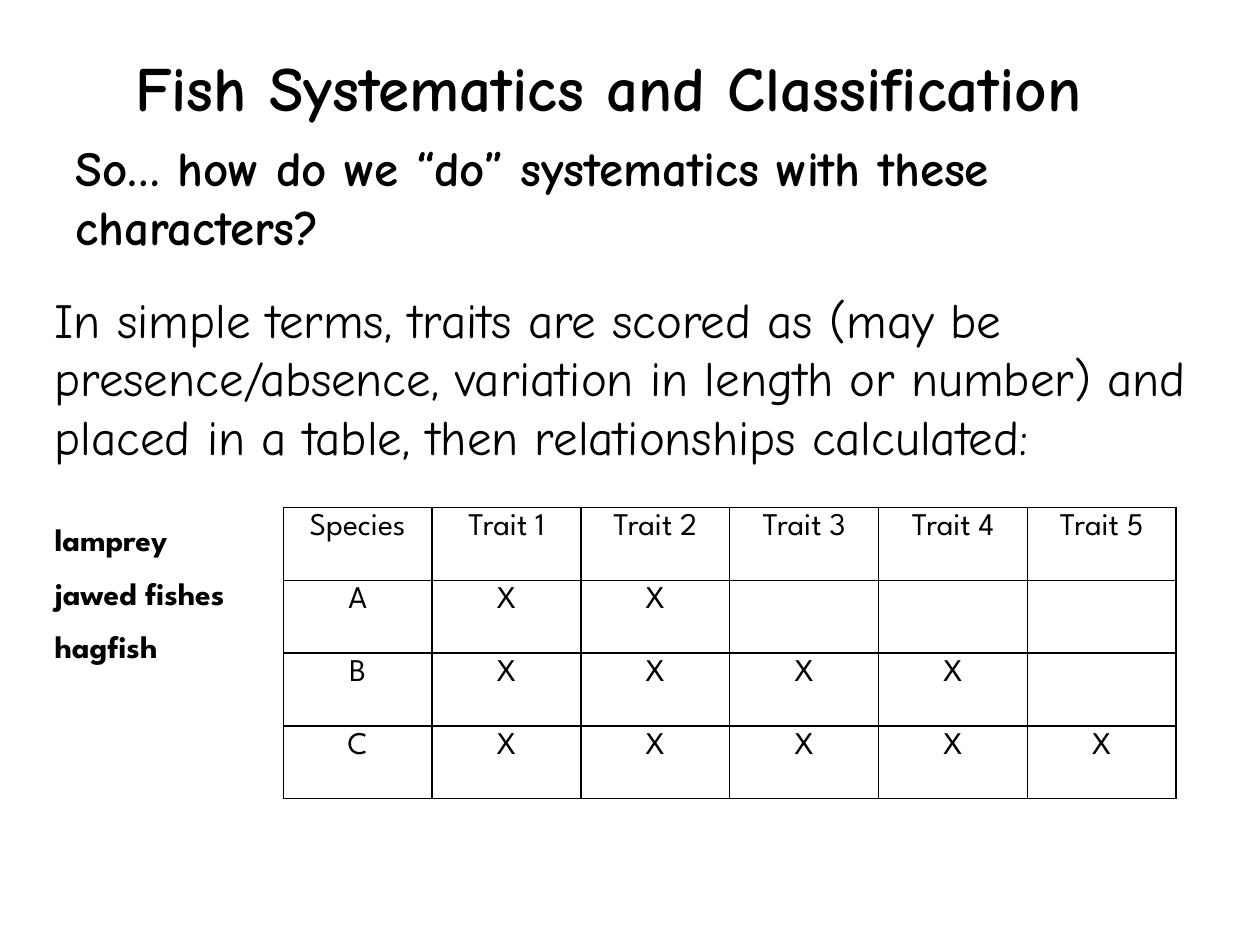
from dataclasses import dataclass
from lxml.etree import SubElement as Sub
from pptx import Presentation as Deck
from pptx.dml.color import RGBColor as Color
from pptx.enum.text import MSO_ANCHOR as Anchor, MSO_AUTO_SIZE as Auto, PP_ALIGN as Align
from pptx.oxml.ns import qn
from pptx.util import Cm, Pt


@dataclass(frozen=True)
class Theme:
    ink: str = "000000"
    prose: str = "Comic Neue"
    label: str = "League Spartan"
    head: int = 36
    body: int = 28
    small: int = 18
    rule: int = 1


class Page:
    """Holds the theme and the current slide, and adds each kind of element."""

    def __init__(self, deck, theme):
        self.theme = theme
        self.slide = deck.slides.add_slide(deck.slide_layouts[1])

    def put(self, frame, text, font, size, bold=False, align=Align.LEFT):
        para = frame.paragraphs[0]
        para.alignment = align
        para.space_before = Pt(0)
        run = para.add_run()
        run.text = text
        run.font.name = font
        run.font.size = Pt(size)
        run.font.bold = bold
        run.font.color.rgb = Color.from_string(self.theme.ink)
        return para

    def place(self, shape, box):
        shape.left, shape.top, shape.width, shape.height = map(Cm, box)
        frame = shape.text_frame
        frame.word_wrap = True
        frame.auto_size = Auto.NONE
        frame.vertical_anchor = Anchor.TOP
        return frame

    def title(self, text, box):
        frame = self.place(self.slide.shapes.title, box)
        self.put(frame, text, self.theme.prose, self.theme.head, True, Align.CENTER)

    def body(self, text, box):
        frame = self.place(self.slide.placeholders[1], box)
        para = self.put(frame, text, self.theme.prose, self.theme.body)
        props = para._p.get_or_add_pPr()
        props.set("marL", "0")
        props.set("indent", "0")
        Sub(props, qn("a:buNone"))

    def text(self, text, box, font, size):
        shape = self.slide.shapes.add_textbox(*map(Cm, box))
        self.put(self.place(shape, box), text, font, size, True)

    def edge(self, cell):
        props = cell._tc.get_or_add_tcPr()
        for side in ("lnL", "lnR", "lnT", "lnB"):
            line = Sub(props, qn(f"a:{side}"), w=str(int(Pt(self.theme.rule))))
            fill = Sub(line, qn("a:solidFill"))
            Sub(fill, qn("a:srgbClr"), val=self.theme.ink)

    def table(self, rows, box):
        shape = self.slide.shapes.add_table(len(rows), len(rows[0]), *map(Cm, box))
        grid = shape.table
        grid.first_row = grid.horz_banding = False
        for i, row in enumerate(rows):
            for j, text in enumerate(row):
                cell = grid.cell(i, j)
                self.edge(cell)
                cell.fill.background()
                if text:
                    self.put(cell.text_frame, text, self.theme.label,
                             self.theme.small, align=Align.CENTER)


def main():
    deck = Deck()
    deck.slide_width, deck.slide_height = Cm(25.4), Cm(19.05)
    theme = Theme()
    page = Page(deck, theme)
    page.title("Fish Systematics and Classification ", (1.06, 0.85, 22.86, 1.8))
    page.text("So… how do we “do” systematics with these characters?",
              (1.27, 2.65, 22.43, 2.65), theme.prose, theme.body)
    page.body("In simple terms, traits are scored as (may be presence/absence, "
              "variation in length or number) and placed in a table, "
              "then relationships calculated:", (0.85, 5.7, 24.13, 3.84))
    traits = 5
    scores = {"A": 2, "B": 4, "C": 5}
    rows = [["Species"] + [f"Trait {n + 1}" for n in range(traits)]]
    rows += [[name] + ["X"] * n + [""] * (traits - n) for name, n in scores.items()]
    page.table(rows, (5.71, 10.23, 18, 5.87))
    for i, name in enumerate(("lamprey", "jawed fishes", "hagfish")):
        page.text(name, (0.85, 10.36 + 1.08 * i, 4.45, 1.02), theme.label, theme.small)
    deck.save("out.pptx")


if __name__ == "__main__":
    main()
